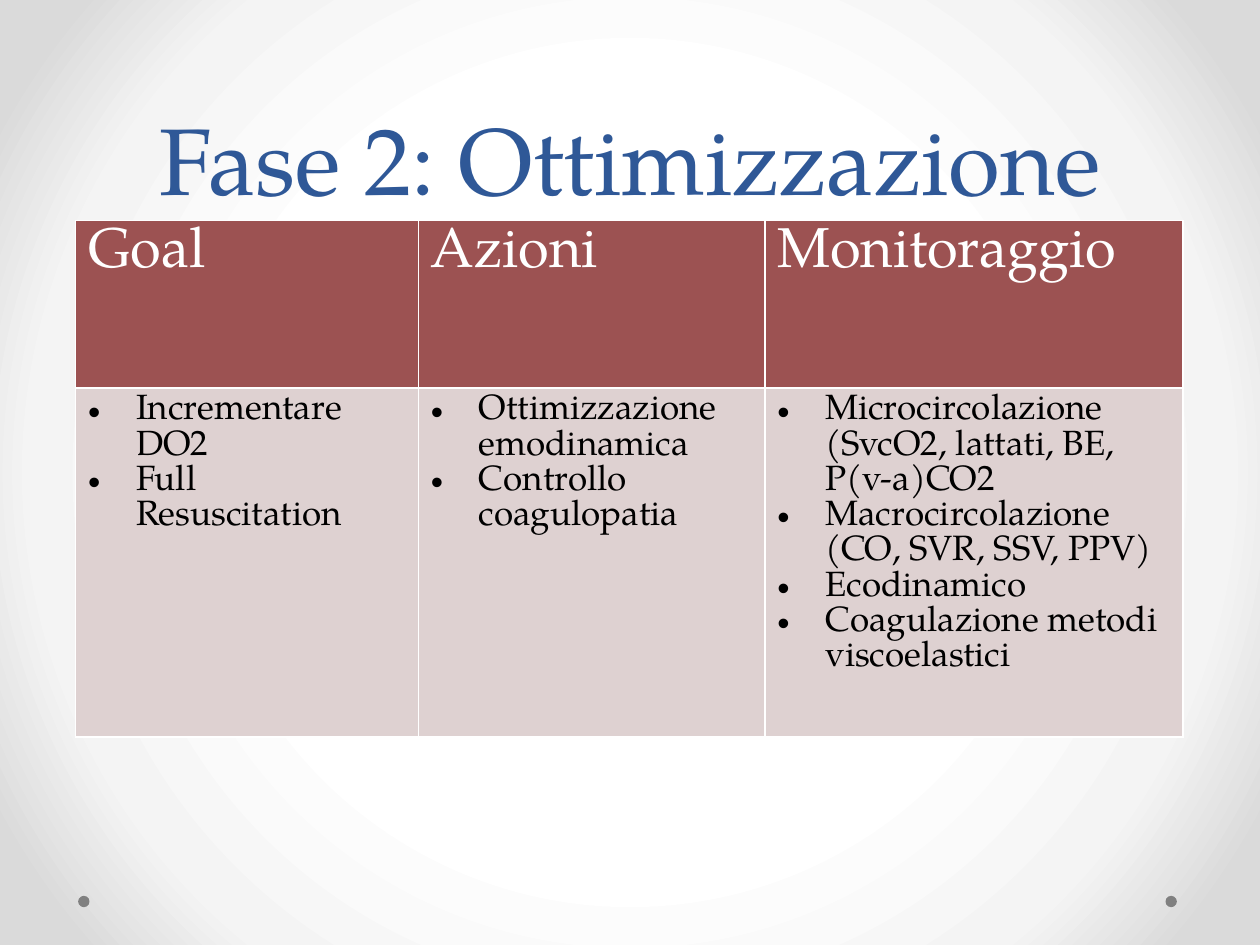
"""Build the "Fase 2: Ottimizzazione" slide with its goal, action and monitoring table."""
from dataclasses import dataclass

from lxml import etree
from pptx import Presentation
from pptx.dml.color import RGBColor
from pptx.enum.shapes import MSO_SHAPE
from pptx.enum.text import MSO_ANCHOR, PP_ALIGN
from pptx.oxml import parse_xml
from pptx.oxml.ns import nsdecls, qn
from pptx.util import Inches, Pt

OVAL = MSO_SHAPE.OVAL
BOTTOM = MSO_ANCHOR.BOTTOM
CENTER = PP_ALIGN.CENTER

FONT = "TeX Gyre Pagella"
BLUE = RGBColor(0x2F, 0x58, 0x97)
RED = RGBColor(0x9C, 0x52, 0x52)
PINK = RGBColor(0xDE, 0xD1, 0xD1)
GRAY = RGBColor(0x80, 0x80, 0x80)
WHITE = RGBColor(0xFF, 0xFF, 0xFF)
BLACK = RGBColor(0, 0, 0)
GRADIENT = ((50, WHITE), (76, RGBColor(0xF4, 0xF4, 0xF4)), (92, RGBColor(0xDA, 0xDA, 0xDA)))


@dataclass
class Column:
    """One table column with its heading and bullet items."""
    heading: str
    width: float
    items: tuple[str, ...]


COLUMNS = (
    Column("Goal", 2.72, ("Incrementare DO2", "Full Resuscitation")),
    Column("Azioni", 2.75, ("Ottimizzazione emodinamica", "Controllo coagulopatia")),
    Column("Monitoraggio", 3.32, (
        "Microcircolazione (SvcO2, lattati, BE, P(v-a)CO2",
        "Macrocircolazione (CO, SVR, SSV, PPV)",
        "Ecodinamico",
        "Coagulazione metodi viscoelastici",
    )),
)
ROW_HEIGHTS = (1.33, 2.35)


def set_background(s) -> None:
    """Give the slide a circular gradient."""
    stops = "".join(
        f'<a:gs pos="{pos * 1000}"><a:srgbClr val="{color}"/></a:gs>' for pos, color in GRADIENT
    )
    bg = parse_xml(
        f'<p:bg {nsdecls("p", "a")}><p:bgPr><a:gradFill rotWithShape="1"><a:gsLst>{stops}</a:gsLst>'
        '<a:path path="circle"><a:fillToRect l="50000" t="50000" r="50000" b="50000"/></a:path>'
        "</a:gradFill><a:effectLst/></p:bgPr></p:bg>"
    )
    s.element.cSld.insert(0, bg)


def add_dot(s, left: float) -> None:
    """Draw a small footer dot."""
    sp = s.shapes.add_shape(OVAL, Inches(left), Inches(7.11), Inches(0.09), Inches(0.09))
    sp.shadow.inherit = False
    sp.fill.solid()
    sp.fill.fore_color.rgb = GRAY
    sp.line.fill.background()


def add_run(p, text: str, size: float, color: RGBColor) -> None:
    """Append a formatted run to a paragraph."""
    r = p.add_run()
    r.text = text
    r.font.name = FONT
    r.font.size = Pt(size)
    r.font.bold = False
    r.font.color.rgb = color


def add_title(s, text: str) -> None:
    """Place the slide title."""
    tf = s.shapes.add_textbox(Inches(0.5), Inches(0), Inches(9), Inches(1.75)).text_frame
    tf.word_wrap = True
    tf.vertical_anchor = BOTTOM
    p = tf.paragraphs[0]
    p.alignment = CENTER
    p.line_spacing = Pt(58)
    add_run(p, text, 54, BLUE)


def set_bullet(p) -> None:
    """Give a paragraph a hanging bullet."""
    pPr = p._p.get_or_add_pPr()
    pPr.set("marL", str(Inches(0.38)))
    pPr.set("indent", str(Inches(-0.38)))
    etree.SubElement(pPr, qn("a:buFont"), typeface="Arial")
    etree.SubElement(pPr, qn("a:buChar"), char="•")


def style_cell(cell, fill: RGBColor) -> None:
    """Fill a cell and outline it in white."""
    cell.fill.solid()
    cell.fill.fore_color.rgb = fill
    tcPr = cell._tc.get_or_add_tcPr()
    for i, side in enumerate("LRTB"):
        tcPr.insert(i, parse_xml(
            f'<a:ln{side} {nsdecls("a")} w="{Pt(1)}"><a:solidFill>'
            f'<a:srgbClr val="{WHITE}"/></a:solidFill></a:ln{side}>'
        ))


def add_phase_table(s) -> None:
    """Draw the table of goals, actions and monitoring."""
    width = sum(column.width for column in COLUMNS)
    table = s.shapes.add_table(
        len(ROW_HEIGHTS), len(COLUMNS), Inches(0.6), Inches(1.75),
        Inches(width), Inches(sum(ROW_HEIGHTS)),
    ).table
    for row, height in zip(table.rows, ROW_HEIGHTS):
        row.height = Inches(height)
    for i, column in enumerate(COLUMNS):
        table.columns[i].width = Inches(column.width)
        head, body = table.cell(0, i), table.cell(1, i)
        style_cell(head, RED)
        style_cell(body, PINK)
        add_run(head.text_frame.paragraphs[0], column.heading, 32, WHITE)
        tf = body.text_frame
        for j, item in enumerate(column.items):
            p = tf.add_paragraph() if j else tf.paragraphs[0]
            set_bullet(p)
            add_run(p, item, 20, BLACK)


def main() -> None:
    """Build and save the presentation."""
    prs = Presentation()
    prs.slide_width, prs.slide_height = Inches(10), Inches(7.5)
    s = prs.slides.add_slide(prs.slide_layouts[6])
    set_background(s)
    for left in (9.25, 0.62):
        add_dot(s, left)
    add_title(s, "Fase 2: Ottimizzazione")
    add_phase_table(s)
    prs.save("out.pptx")


if __name__ == "__main__":
    main()
